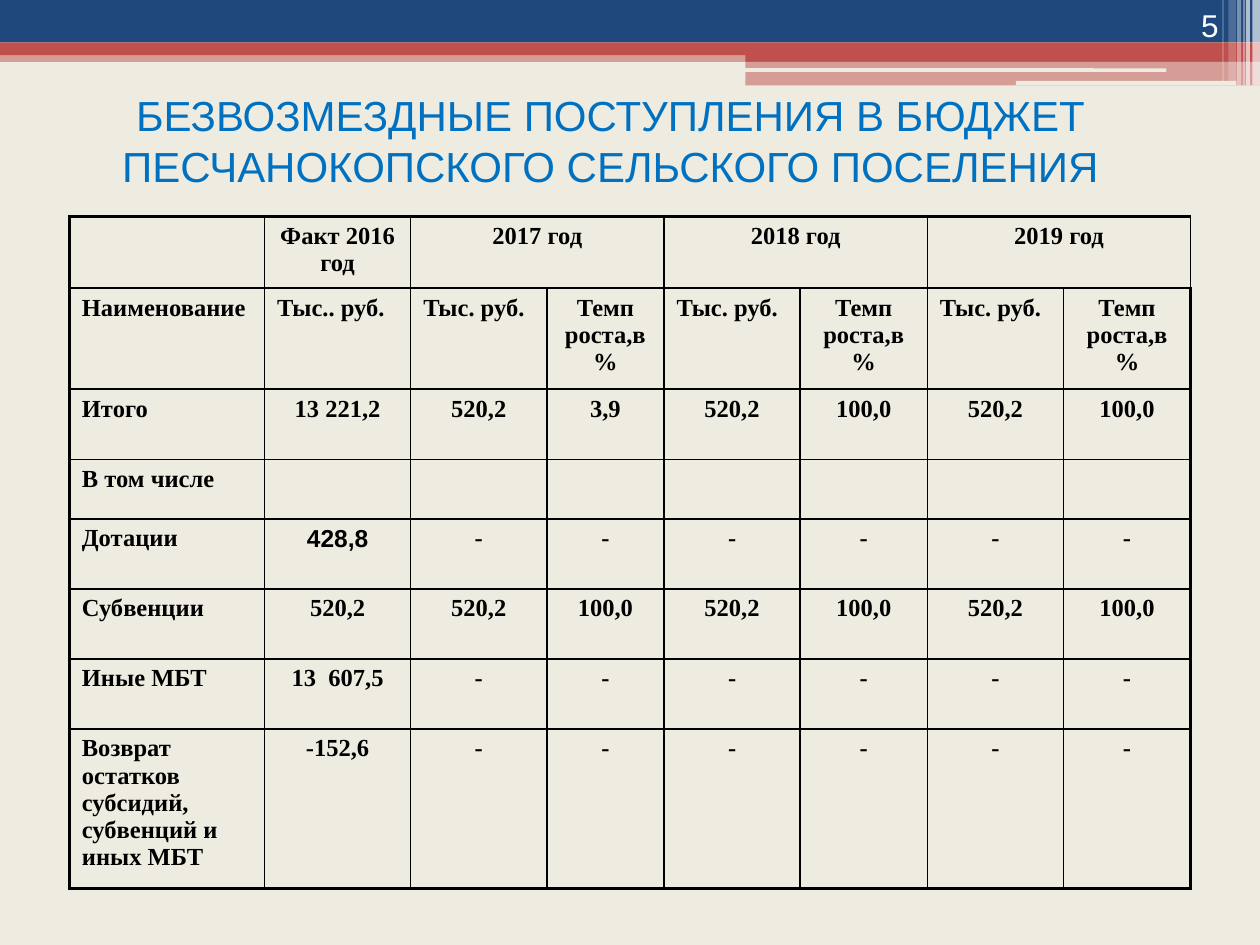
from dataclasses import dataclass

from lxml import etree
from pptx import Presentation
from pptx import util as u
from pptx.dml.color import RGBColor
from pptx.enum import shapes, text
from pptx.oxml import ns

Pt = u.Pt
RECT = shapes.MSO_SHAPE.RECTANGLE
ROUND = shapes.MSO_SHAPE.ROUNDED_RECTANGLE
LEFT, CENTER, RIGHT = text.PP_ALIGN.LEFT, text.PP_ALIGN.CENTER, text.PP_ALIGN.RIGHT


@dataclass(frozen=True)
class Theme:
    background: str = "EEECE1"
    navy: str = "1F497D"
    red: str = "C0504D"
    white: str = "FFFFFF"
    black: str = "000000"
    title: str = "0070C0"
    sans: str = "Arial"
    serif: str = "Times New Roman"
    title_size: int = 24
    number_size: int = 18
    table_size: int = 14
    inner_line: float = 1
    outer_line: float = 2.25


class SlideBuilder:
    def __init__(self, slide, theme):
        self.slide = slide
        self.theme = theme
        fill = slide.background.fill
        fill.solid()
        fill.fore_color.rgb = RGBColor.from_string(theme.background)

    def format_text(self, frame, align, font, size, color, bold=False):
        for paragraph in frame.paragraphs:
            paragraph.alignment = align
            for item in [paragraph, *paragraph.runs]:
                item.font.name = font
                item.font.size = Pt(size)
                item.font.bold = bold
                item.font.color.rgb = RGBColor.from_string(color)

    def block(self, kind, box, color, opacity=100):
        shape = self.slide.shapes.add_shape(kind, *map(Pt, box))
        shape.shadow.inherit = False
        shape.line.fill.background()
        shape.fill.solid()
        shape.fill.fore_color.rgb = RGBColor.from_string(color)
        if opacity < 100:
            tone = shape.fill._xPr.find(".//" + ns.qn("a:srgbClr"))
            etree.SubElement(tone, ns.qn("a:alpha"), val=str(opacity * 1000))

    def title(self, wording, box):
        shape = self.slide.shapes.title
        shape.left, shape.top, shape.width, shape.height = map(Pt, box)
        frame = shape.text_frame
        frame.text = wording
        frame.word_wrap = True
        frame.auto_size = text.MSO_AUTO_SIZE.NONE
        frame.vertical_anchor = text.MSO_ANCHOR.MIDDLE
        self.format_text(frame, CENTER, self.theme.sans, self.theme.title_size, self.theme.title)

    def page_number(self, wording, box):
        frame = self.slide.shapes.add_textbox(*map(Pt, box)).text_frame
        frame.text = wording
        frame.word_wrap = True
        frame.vertical_anchor = text.MSO_ANCHOR.BOTTOM
        self.format_text(frame, RIGHT, self.theme.sans, self.theme.number_size, self.theme.white)

    def cell_borders(self, cell, outer_sides):
        properties = cell._tc.get_or_add_tcPr()
        for position, side in enumerate("LRTB"):
            width = self.theme.outer_line if side in outer_sides else self.theme.inner_line
            line = etree.Element(ns.qn(f"a:ln{side}"), w=str(Pt(width)))
            fill = etree.SubElement(line, ns.qn("a:solidFill"))
            etree.SubElement(fill, ns.qn("a:srgbClr"), val=self.theme.black)
            properties.insert(position, line)

    def table(self, rows, left, top, widths, heights, merges, left_cells, sans_cells):
        frame = self.slide.shapes.add_table(
            len(rows), len(widths), Pt(left), Pt(top), Pt(sum(widths)), Pt(sum(heights)))
        table = frame.table
        table.first_row = table.horz_banding = False
        for column, width in zip(table.columns, widths):
            column.width = Pt(width)
        for row, height in zip(table.rows, heights):
            row.height = Pt(height)
        for r, values in enumerate(rows):
            for c, value in enumerate(values):
                cell = table.cell(r, c)
                cell.text_frame.text = value
                cell.fill.background()
                align = LEFT if c == 0 or (r, c) in left_cells else CENTER
                font = self.theme.sans if (r, c) in sans_cells else self.theme.serif
                self.format_text(cell.text_frame, align, font, self.theme.table_size,
                                 self.theme.black, bold=True)
                edges = {"L": c == 0, "R": c == len(widths) - 1,
                         "T": r == 0, "B": r == len(rows) - 1}
                self.cell_borders(cell, [side for side, outer in edges.items() if outer])
        for r, first, last in merges:
            table.cell(r, first).merge(table.cell(r, last))


def main():
    theme = Theme()
    presentation = Presentation()
    presentation.slide_width, presentation.slide_height = Pt(720), Pt(540)
    layout = presentation.slide_layouts.get_by_name("Title Only")
    builder = SlideBuilder(presentation.slides.add_slide(layout), theme)

    # Header bands
    builder.block(RECT, (0, 28.8, 720, 6.6), theme.red, 50)
    builder.block(RECT, (0, 0, 720, 24.3), theme.navy)
    builder.block(RECT, (0, 24.3, 720, 7.2), theme.red)
    builder.block(RECT, (426, 28.2, 294, 7), theme.red)
    builder.block(RECT, (426, 34.8, 294, 14), theme.red, 50)
    builder.block(ROUND, (425.5, 39, 241, 2), theme.background)
    builder.block(ROUND, (580.5, 46.2, 126, 2.6), theme.background)

    # Light stripes in the corner: left, width, height, opacity
    stripes = [(715.6, 4.4, 48.8, 65), (712, 2.2, 48.8, 65), (710.5, 0.7, 48.8, 60),
               (707, 2.2, 48.8, 40), (702, 4.3, 46.2, 20), (698.5, 0.7, 46.2, 30)]
    for left, width, height, opacity in stripes:
        builder.block(RECT, (left, 0, width, height), theme.white, opacity)

    # Title and page number
    builder.title("БЕЗВОЗМЕЗДНЫЕ ПОСТУПЛЕНИЯ В БЮДЖЕТ ПЕСЧАНОКОПСКОГО СЕЛЬСКОГО ПОСЕЛЕНИЯ",
                  (0, 54.7, 697.7, 51))
    builder.page_number("5", (643.7, 0, 59.8, 28.8))

    # Budget table
    unit, growth = "Тыс. руб.", "Темп роста,в %"
    dashes = ["-"] * 6
    rows = [
        ["", "Факт 2016 год", "2017 год", "", "2018 год", "", "2019 год", ""],
        ["Наименование", "Тыс.. руб.", *[unit, growth] * 3],
        ["Итого", "13 221,2", "520,2", "3,9", *["520,2", "100,0"] * 2],
        ["В том числе", *[""] * 7],
        ["Дотации", "428,8", *dashes],
        ["Субвенции", "520,2", *["520,2", "100,0"] * 3],
        ["Иные МБТ", "13  607,5", *dashes],
        ["Возврат остатков субсидий, субвенций и иных МБТ", "-152,6", *dashes],
    ]
    builder.table(
        rows, left=39.6, top=123.8,
        widths=[111.6, 83.5, 77.8, 67, 77.8, 72.7, 77.8, 72.7],
        heights=[40.2, 53.5, 40.2, 34, 40, 40, 40, 84.8],
        merges=[(0, first, first + 1) for first in (2, 4, 6)],
        left_cells={(1, column) for column in (1, 2, 4, 6)},
        sans_cells={(4, 1)})

    presentation.save("out.pptx")


if __name__ == "__main__":
    main()
